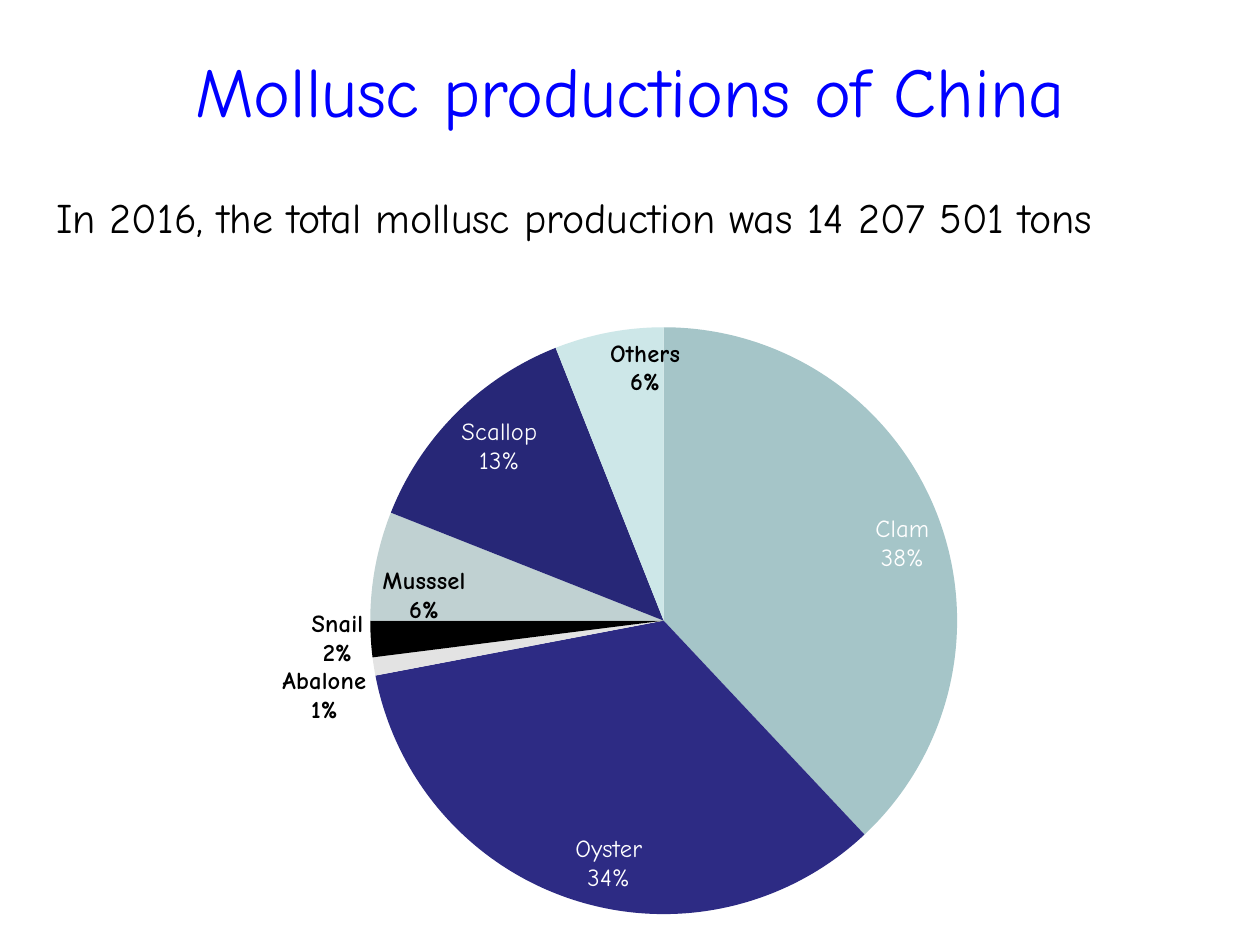
"""Build a slide with a pie chart of the mollusc production of China."""
from dataclasses import dataclass
from typing import Any

from lxml import etree
from pptx import Presentation
from pptx import util as u
from pptx.chart import data as chart_data
from pptx.dml.color import RGBColor
from pptx.enum import chart as chart_enum
from pptx.enum import text

FONT = "Comic Neue"
BLUE = RGBColor(0x00, 0x00, 0xFF)
BLACK = RGBColor(0x00, 0x00, 0x00)
WHITE = RGBColor(0xFF, 0xFF, 0xFF)
TEAL = RGBColor(0xA5, 0xC5, 0xC8)
INDIGO = RGBColor(0x2D, 0x2B, 0x84)
PALE_GREY = RGBColor(0xE3, 0xE3, 0xE3)
GREY_TEAL = RGBColor(0xC0, 0xD1, 0xD2)
NAVY = RGBColor(0x27, 0x27, 0x77)
PALE_TEAL = RGBColor(0xCD, 0xE7, 0xE8)

INSIDE = chart_enum.XL_LABEL_POSITION.INSIDE_END
OUTSIDE = chart_enum.XL_LABEL_POSITION.OUTSIDE_END
CHART_NS = "http://schemas.openxmlformats.org/drawingml/2006/chart"


@dataclass(frozen=True)
class Caption:
    words: str
    left: float
    top: float
    width: float
    height: float
    size: float
    color: RGBColor
    align: Any
    anchor: Any
    line_spacing: float


@dataclass(frozen=True)
class Slice:
    name: str
    percent: int
    fill: RGBColor
    label_color: RGBColor = BLACK
    label_position: Any = INSIDE


CAPTIONS = (
    Caption("Mollusc productions of China", 20, 15, 680, 63, 40, BLUE,
            text.PP_ALIGN.CENTER, text.MSO_ANCHOR.MIDDLE, 1.2),
    Caption("In 2016, the total mollusc production was 14 207 501 tons",
            25, 106, 669, 36, 24, BLACK,
            text.PP_ALIGN.LEFT, text.MSO_ANCHOR.TOP, 1.0),
)
SLICES = (
    Slice("Clam", 38, TEAL, WHITE),
    Slice("Oyster", 34, INDIGO, WHITE),
    Slice("Abalone", 1, PALE_GREY, label_position=OUTSIDE),
    Slice("Snail", 2, BLACK, label_position=OUTSIDE),
    Slice("Musssel", 6, GREY_TEAL),
    Slice("Scallop", 13, NAVY, WHITE),
    Slice("Others", 6, PALE_TEAL),
)
PLOT_LAYOUT = {"layoutTarget": "inner", "xMode": "edge", "yMode": "edge",
               "x": 0.21, "y": 0.12, "w": 0.68, "h": 0.86}


def apply_format(target: Any, values: dict[str, Any]) -> None:
    """Set every named attribute on the target."""
    for name, value in values.items():
        setattr(target, name, value)


def style_font(font: Any, size: float, color: RGBColor, bold: bool = False) -> None:
    """Give a font the deck's typeface, a size, a weight and a colour."""
    apply_format(font, {"name": FONT, "size": u.Pt(size), "bold": bold})
    font.color.rgb = color


def add_caption(page: Any, caption: Caption) -> None:
    """Draw one line of text."""
    box = page.shapes.add_textbox(u.Pt(caption.left), u.Pt(caption.top),
                                  u.Pt(caption.width), u.Pt(caption.height))
    frame = box.text_frame
    apply_format(frame, {"word_wrap": True, "vertical_anchor": caption.anchor})
    para = frame.paragraphs[0]
    apply_format(para, {"alignment": caption.align,
                        "line_spacing": caption.line_spacing})
    span = para.add_run()
    span.text = caption.words
    style_font(span.font, caption.size, caption.color)


def chart_tag(name: str) -> str:
    """Return a qualified chart element name."""
    return f"{{{CHART_NS}}}{name}"


def place_plot(chart: Any) -> None:
    """Fix the pie's place inside the chart frame."""
    area = next(chart.element.iter(chart_tag("plotArea")))
    for old in area.findall(chart_tag("layout")):
        area.remove(old)
    layout = etree.Element(chart_tag("layout"))
    manual = etree.SubElement(layout, chart_tag("manualLayout"))
    for name, value in PLOT_LAYOUT.items():
        etree.SubElement(manual, chart_tag(name)).set("val", str(value))
    area.insert(0, layout)


def show_name_and_percent(chart: Any) -> None:
    """Make each slice label show its category above its percentage."""
    flags = {"showVal": "0", "showCatName": "1", "showPercent": "1"}
    for label in chart.element.iter(chart_tag("dLbl")):
        for name, value in flags.items():
            label.find(chart_tag(name)).set("val", value)
        etree.SubElement(label, chart_tag("separator")).text = "\n"


def add_pie(page: Any, slices: tuple[Slice, ...]) -> None:
    """Draw the pie chart with its coloured, labelled slices."""
    shares = chart_data.CategoryChartData()
    shares.categories = [item.name for item in slices]
    shares.add_series("Series 1", [item.percent for item in slices])
    chart = page.shapes.add_chart(
        chart_enum.XL_CHART_TYPE.PIE, u.Pt(108), u.Pt(139.7),
        u.Pt(493.2), u.Pt(391), shares).chart
    apply_format(chart, {"has_legend": False, "has_title": False})
    style_font(chart.font, 10, BLACK)
    plot = chart.plots[0]
    plot.vary_by_categories = True
    for index, item in enumerate(slices):
        point = plot.series[0].points[index]
        point.format.fill.solid()
        point.format.fill.fore_color.rgb = item.fill
        point.format.line.fill.background()
        style_font(point.data_label.font, 14, item.label_color,
                   item.label_color == BLACK)
        point.data_label.position = item.label_position
    show_name_and_percent(chart)
    place_plot(chart)


def main() -> None:
    """Assemble and save the deck."""
    deck = Presentation()
    apply_format(deck, {"slide_width": u.Pt(720), "slide_height": u.Pt(540)})
    page = deck.slides.add_slide(deck.slide_layouts[6])
    title, total = CAPTIONS
    add_caption(page, title)
    add_pie(page, SLICES)
    add_caption(page, total)
    deck.save("out.pptx")


if __name__ == "__main__":
    main()
